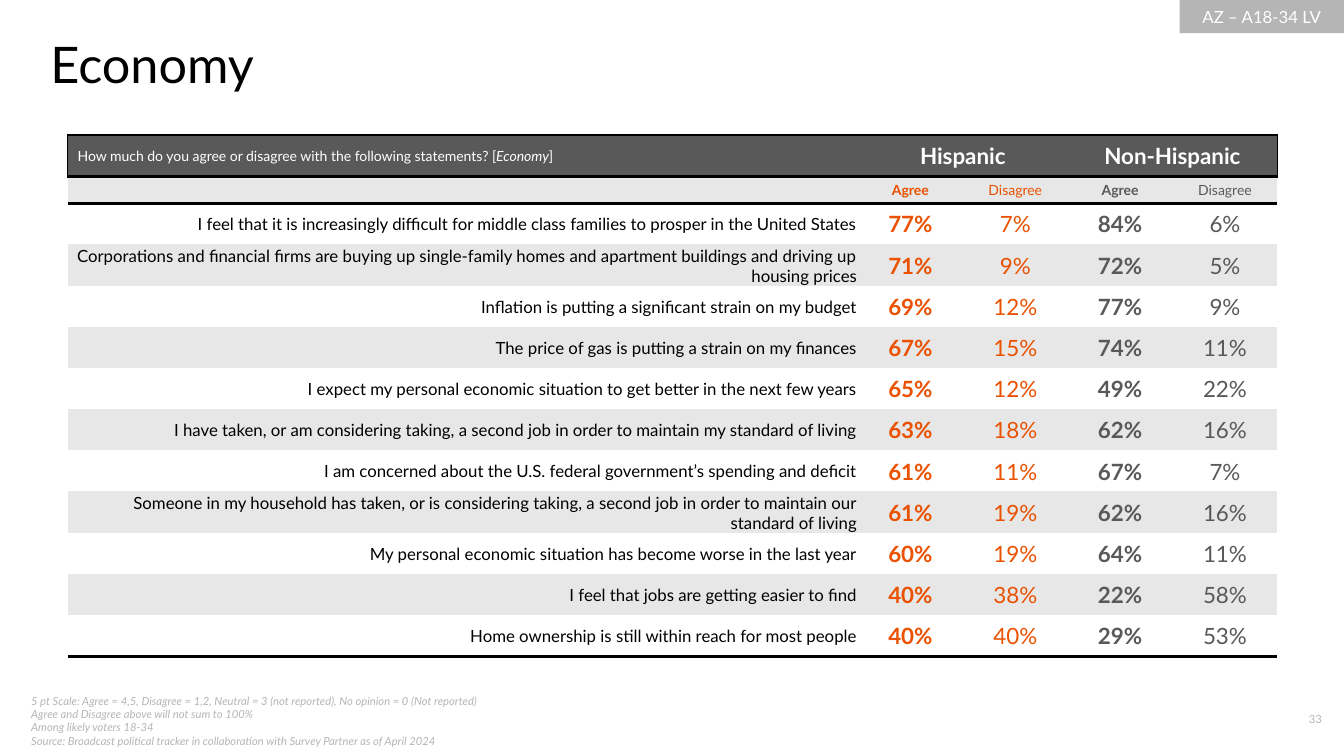
from lxml import etree
from pptx import Presentation
from pptx.dml.color import RGBColor
from pptx.enum import shapes, text
from pptx.oxml import ns
from pptx.util import Inches, Pt

BLACK, WHITE, DARK, PALE, MUTED, ORANGE = "000000", "FFFFFF", "595959", "E7E7E7", "B5B5B5", "EA5101"
LEFT, CENTER, RIGHT = text.PP_ALIGN.LEFT, text.PP_ALIGN.CENTER, text.PP_ALIGN.RIGHT
NO_STYLE = "{2D5ABB26-0587-4C30-8999-92F81FD0307C}"
TIGHT = {"margin_left": 0.01, "margin_top": 0.01, "margin_right": 0.01, "margin_bottom": 0}

QUESTION = [("How much do you agree or disagree with the following statements? [", False),
            ("Economy", True), ("]", False)]
GROUPS = ["Hispanic", "Non-Hispanic"]
ANSWERS = ["Agree", "Disagree"] * len(GROUPS)
STATEMENTS = [
    ("I feel that it is increasingly difficult for middle class families to prosper in the United States", 77, 7, 84, 6),
    ("Corporations and financial firms are buying up single-family homes and apartment buildings "
     "and driving up housing prices", 71, 9, 72, 5),
    ("Inflation is putting a significant strain on my budget", 69, 12, 77, 9),
    ("The price of gas is putting a strain on my finances", 67, 15, 74, 11),
    ("I expect my personal economic situation to get better in the next few years", 65, 12, 49, 22),
    ("I have taken, or am considering taking, a second job in order to maintain my standard of living", 63, 18, 62, 16),
    ("I am concerned about the U.S. federal government’s spending and deficit", 61, 11, 67, 7),
    ("Someone in my household has taken, or is considering taking, a second job in order to maintain "
     "our standard of living", 61, 19, 62, 16),
    ("My personal economic situation has become worse in the last year", 60, 19, 64, 11),
    ("I feel that jobs are getting easier to find", 40, 38, 22, 58),
    ("Home ownership is still within reach for most people", 40, 40, 29, 53),
]
NOTES = [
    "5 pt Scale: Agree = 4,5, Disagree = 1,2, Neutral = 3 (not reported), No opinion = 0 (Not reported)",
    "Agree and Disagree above will not sum to 100%",
    "Among likely voters 18-34 \vSource: Broadcast political tracker in collaboration with "
    "Survey Partner as of April 2024",
]


def rgb(value):
    return RGBColor.from_string(value)


def write(para, words, size, color, align=LEFT, **styles):
    para.alignment = align
    for index, part in enumerate(words.split("\v")):
        if index:
            para.add_line_break()
        span = para.add_run()
        span.text = part
        span.font.color.rgb = rgb(color)
        for name, value in {"name": "Lato", "size": Pt(size), **styles}.items():
            setattr(span.font, name, value)


def add_text(page, box, lines, size, color, align=LEFT, anchor=text.MSO_ANCHOR.TOP, margin=None, **styles):
    frame = page.shapes.add_textbox(*map(Inches, box)).text_frame
    frame.word_wrap = True
    frame.vertical_anchor = anchor
    if margin is not None:
        for side in ("left", "top", "right", "bottom"):
            setattr(frame, f"margin_{side}", Inches(margin))
    for index, line in enumerate(lines):
        para = frame.add_paragraph() if index else frame.paragraphs[0]
        write(para, line, size, color, align, **styles)


def add_audience_tag(page, box):
    tag = page.shapes.add_shape(shapes.MSO_SHAPE.RECTANGLE, *map(Inches, box))
    tag.shadow.inherit = False
    tag.fill.solid()
    tag.fill.fore_color.rgb = rgb(MUTED)
    tag.line.fill.background()
    tag.text_frame.vertical_anchor = text.MSO_ANCHOR.MIDDLE
    write(tag.text_frame.paragraphs[0], "AZ – A18-34 LV", 12, WHITE, CENTER)


def dress(cell, fill, borders):
    """Give a cell its fill and borders; borders maps a side (L, R, T, B) to points."""
    cell.vertical_anchor = text.MSO_ANCHOR.MIDDLE
    properties = cell._tc.get_or_add_tcPr()
    for side in "LRTB":
        if side in borders:
            line = etree.SubElement(properties, ns.qn(f"a:ln{side}"), w=str(Pt(borders[side])))
            solid = etree.SubElement(line, ns.qn("a:solidFill"))
            etree.SubElement(solid, ns.qn("a:srgbClr"), val=BLACK)
    cell.fill.solid()
    cell.fill.fore_color.rgb = rgb(fill)


def answer_style(column):
    return {"color": ORANGE if column <= 2 else DARK, "bold": column % 2 == 1, "align": CENTER}


def fill_header(table, last):
    for column in range(last + 1):
        edges = {0: {"L": 1}, last: {"R": 1}}.get(column, {})
        dress(table.cell(0, column), DARK, {"T": 2.25, "B": 2.25, **edges})
        dress(table.cell(1, column), PALE, {"T": 2.25})
    for words, italic in QUESTION:
        write(table.cell(0, 0).text_frame.paragraphs[0], words, 10, WHITE, italic=italic)
    for index, group in enumerate(GROUPS):
        first = table.cell(0, 1 + 2 * index)
        first.merge(table.cell(0, 2 + 2 * index))
        dress(first, DARK, {"R": 1} if index else {})
        write(first.text_frame.paragraphs[0], group, 16, WHITE, CENTER, bold=True)
    blank = table.cell(1, 0).text_frame.paragraphs[0]
    etree.SubElement(blank._p, ns.qn("a:endParaRPr"), sz="1000")
    for column, answer in enumerate(ANSWERS, 1):
        write(table.cell(1, column).text_frame.paragraphs[0], answer, 10, **answer_style(column))


def add_results(page, box):
    left, top, width, height = box
    row_count, answer_width = len(STATEMENTS) + 2, 1.04
    frame = page.shapes.add_table(row_count, len(ANSWERS) + 1, *map(Inches, box))
    table = frame.table
    table.horz_banding = table.first_row = False
    table._tbl.tblPr.find(ns.qn("a:tableStyleId")).text = NO_STYLE
    for index, column in enumerate(table.columns):
        column.width = Inches(answer_width if index else width - len(ANSWERS) * answer_width)
    for index, row in enumerate(table.rows):
        row.height = Inches(0.25 if index == 1 else (height - 0.25) / (row_count - 1))
    fill_header(table, len(ANSWERS))
    for index, (statement, *shares) in enumerate(STATEMENTS, 2):
        borders = {"B": 2.25} if index == row_count - 1 else {}
        for column, value in enumerate([statement, *shares]):
            cell = table.cell(index, column)
            dress(cell, PALE if index % 2 else WHITE, borders)
            for name, margin in TIGHT.items():
                setattr(cell, name, Inches(margin))
            para = cell.text_frame.paragraphs[0]
            if column:
                write(para, f"{value}%", 16, **answer_style(column))
            else:
                write(para, value, 12, BLACK, RIGHT)


def main():
    deck = Presentation()
    deck.slide_width, deck.slide_height = Inches(13.33), Inches(7.5)
    page = deck.slides.add_slide(deck.slide_layouts[6])
    add_text(page, (0.21, 6.95, 5.11, 0.4), NOTES, 8, MUTED, anchor=text.MSO_ANCHOR.MIDDLE, italic=True)
    add_text(page, (12.33, 7.02, 0.88, 0.27), ["33"], 8, MUTED, RIGHT)
    add_audience_tag(page, (11.7, 0, 1.63, 0.33))
    add_text(page, (0.5, 0.33, 12, 0.61), ["Economy"], 36, BLACK, margin=0)
    add_results(page, (0.67, 1.34, 12, 5.15))
    deck.save("out.pptx")


if __name__ == "__main__":
    main()
